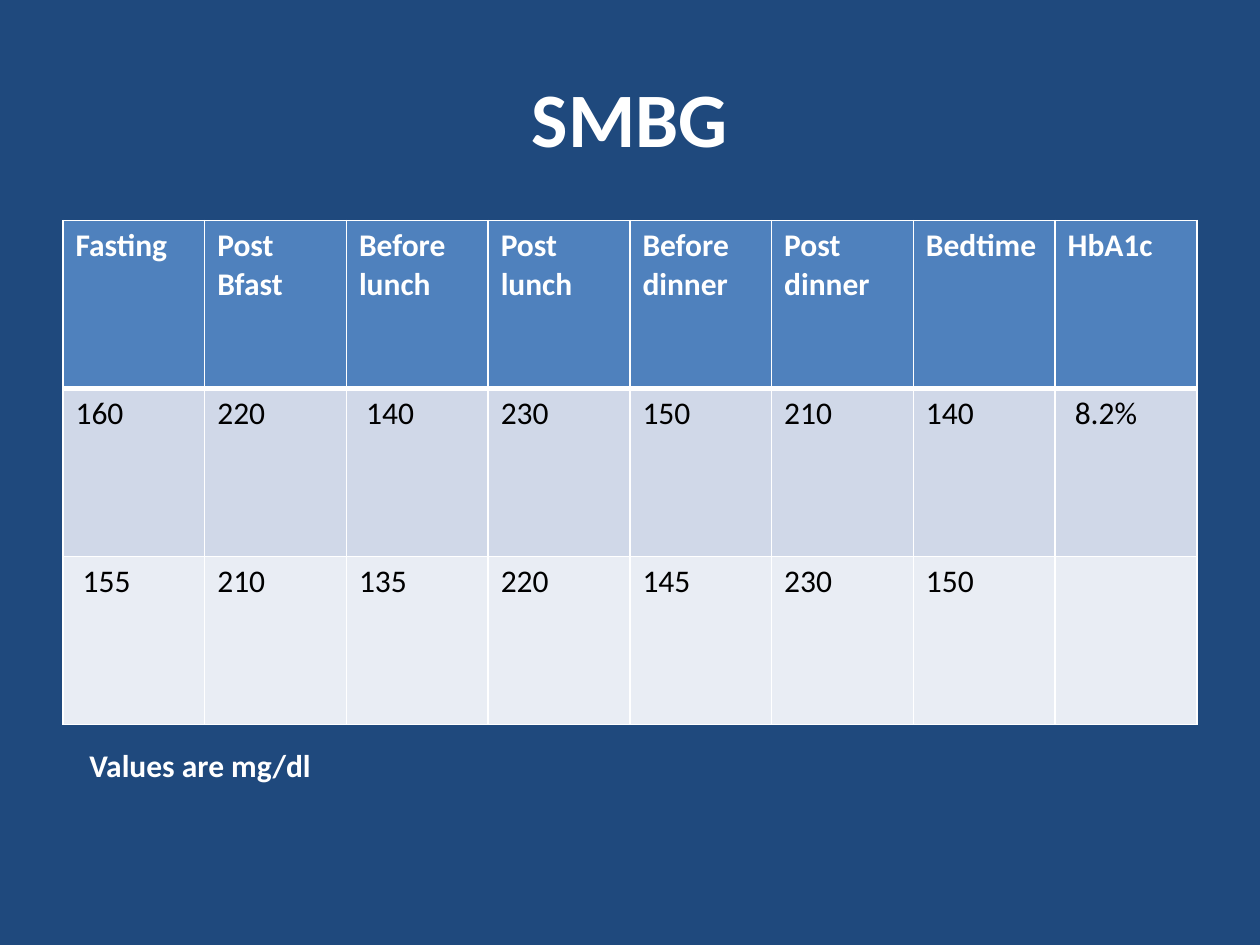
from dataclasses import dataclass

from lxml.etree import SubElement
from pptx import Presentation
from pptx.dml.color import RGBColor as Rgb
from pptx.enum.text import MSO_ANCHOR as Anchor, MSO_AUTO_SIZE as AutoSize, PP_ALIGN as Align
from pptx.oxml.ns import qn
from pptx.util import Pt


@dataclass(frozen=True)
class Theme:
    font: str = "Calibri"
    background: str = "1F497D"
    header: str = "4F81BD"
    bands: tuple[str, str] = ("D0D8E8", "E9EDF4")
    light: str = "FFFFFF"
    dark: str = "000000"
    title_size: int = 44
    body_size: int = 18
    thin: int = 1
    thick: int = 3


@dataclass(frozen=True)
class RowStyle:
    fill: str
    ink: str
    bold: bool
    top: int
    bottom: int


THEME = Theme()
HEADER_STYLE = RowStyle(THEME.header, THEME.light, True, THEME.thin, THEME.thick)
BAND_STYLES = (
    RowStyle(THEME.bands[0], THEME.dark, False, THEME.thick, THEME.thin),
    RowStyle(THEME.bands[1], THEME.dark, False, THEME.thin, THEME.thin),
)
READINGS = (
    ("Fasting", "Post Bfast", "Before lunch", "Post lunch",
     "Before dinner", "Post dinner", "Bedtime", "HbA1c"),
    ("160", "220", " 140", "230", "150", "210", "140", " 8.2%"),
    (" 155", "210", "135", "220", "145", "230", "150", ""),
)


def format_runs(frame, size: int, ink: str, bold: bool) -> None:
    for paragraph in frame.paragraphs:
        for run in paragraph.runs:
            run.font.name = THEME.font
            run.font.size = Pt(size)
            run.font.bold = bold
            run.font.color.rgb = Rgb.from_string(ink)


def place(shape, left: float, top: float, width: float, height: float) -> None:
    shape.left, shape.top = Pt(left), Pt(top)
    shape.width, shape.height = Pt(width), Pt(height)


def set_borders(cell, style: RowStyle) -> None:
    """Draw the four cell edges; the schema wants them ahead of the fill."""
    properties = cell._tc.get_or_add_tcPr()
    edges = (("L", THEME.thin), ("R", THEME.thin), ("T", style.top), ("B", style.bottom))
    for position, (side, weight) in enumerate(edges):
        line = SubElement(properties, qn(f"a:ln{side}"), w=str(Pt(weight)))
        SubElement(SubElement(line, qn("a:solidFill")), qn("a:srgbClr"), val=THEME.light)
        properties.insert(position, line)


def add_title(slide, wording: str) -> None:
    title = slide.shapes.title
    place(title, 36, 21.6, 648, 90)
    title.text_frame.text = wording
    title.text_frame.vertical_anchor = Anchor.MIDDLE
    title.text_frame.paragraphs[0].alignment = Align.CENTER
    format_runs(title.text_frame, THEME.title_size, THEME.light, True)


def add_readings(slide) -> None:
    table = slide.shapes.add_table(len(READINGS), len(READINGS[0]),
                                   Pt(36), Pt(126), Pt(648), Pt(288)).table
    for row, values, style in zip(table.rows, READINGS, (HEADER_STYLE, *BAND_STYLES)):
        for cell, reading in zip(row.cells, values):
            cell.text_frame.text = reading
            format_runs(cell.text_frame, THEME.body_size, style.ink, style.bold)
            cell.fill.solid()
            cell.fill.fore_color.rgb = Rgb.from_string(style.fill)
            set_borders(cell, style)


def add_units(slide, wording: str) -> None:
    units = slide.shapes.add_textbox(Pt(44), Pt(422.9), Pt(142), Pt(29)).text_frame
    units.text = wording
    units.word_wrap = False
    units.auto_size = AutoSize.SHAPE_TO_FIT_TEXT
    format_runs(units, THEME.body_size, THEME.light, True)


def main() -> None:
    deck = Presentation()
    deck.slide_width, deck.slide_height = Pt(720), Pt(540)
    slide = deck.slides.add_slide(deck.slide_layouts.get_by_name("Title Only"))
    slide.background.fill.solid()
    slide.background.fill.fore_color.rgb = Rgb.from_string(THEME.background)
    add_title(slide, "SMBG")
    add_readings(slide)
    add_units(slide, "Values are mg/dl")
    deck.save("out.pptx")


if __name__ == "__main__":
    main()
